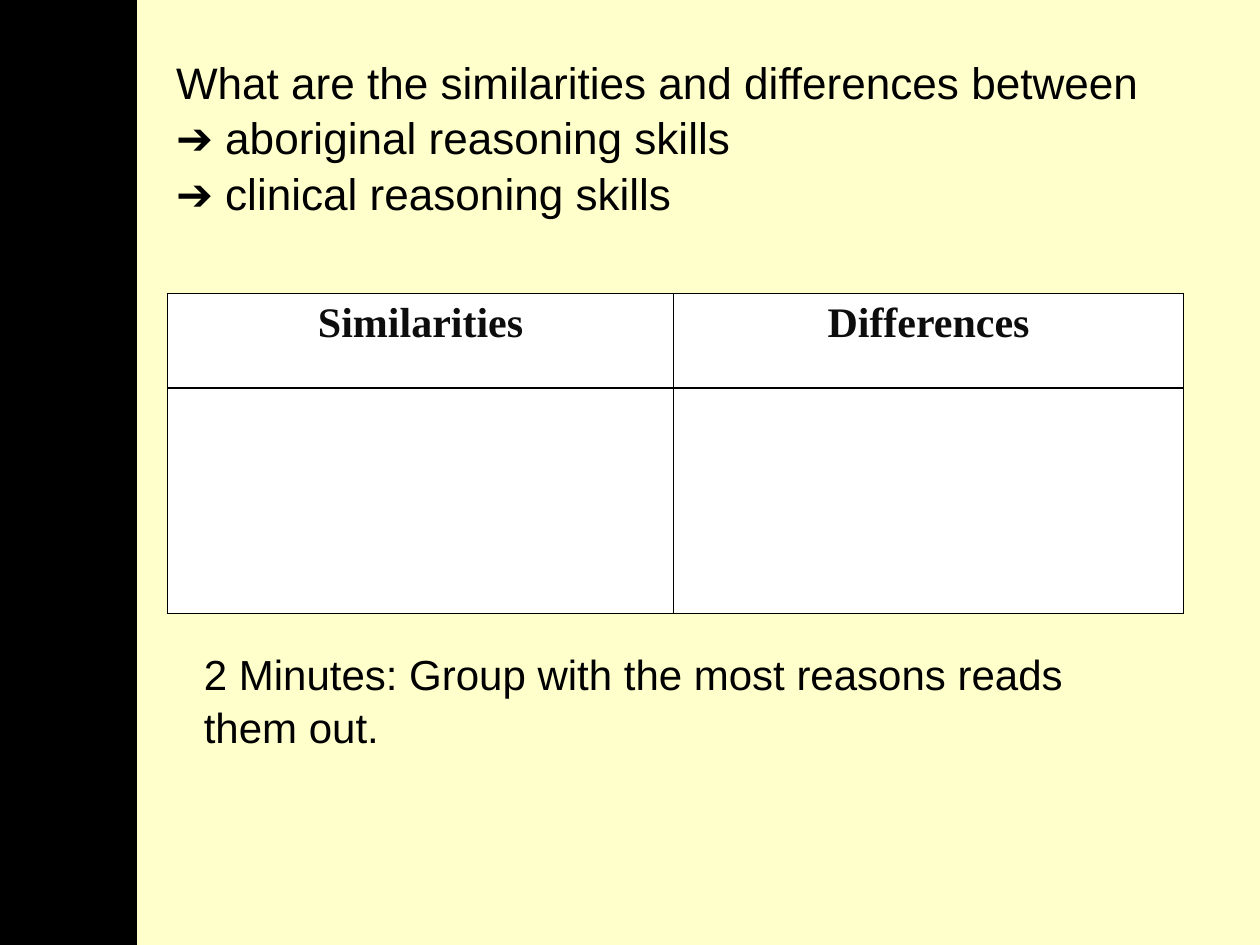
from lxml import etree
from pptx import Presentation
from pptx.dml.color import RGBColor
from pptx.enum.shapes import MSO_SHAPE as Shape
from pptx.enum.text import MSO_ANCHOR as Anchor, PP_ALIGN as Align
from pptx.oxml.ns import qn
from pptx.util import Cm, Pt

COLORS = {"background": "FFFFCC", "black": "000000", "heading": "0D0D0D", "cell": "FFFFFF"}
BODY = {"name": "Arial", "size": Pt(24)}
TITLE = {"name": "Arial", "size": Pt(25.2)}
HEADING = {"name": "Times New Roman", "size": Pt(24), "bold": True}


def rgb(key):
    return RGBColor.from_string(COLORS[key])


def paint(fill, key):
    fill.solid()
    fill.fore_color.rgb = rgb(key)


def style(font, values, color):
    for name, value in values.items():
        setattr(font, name, value)
    font.color.rgb = rgb(color)


def add_sidebar(s):
    bar = s.shapes.add_shape(Shape.RECTANGLE, 0, 0, Cm(2.72), Cm(19.05))
    bar.shadow.inherit = False
    paint(bar.fill, "black")
    bar.line.color.rgb = rgb("black")
    bar.line.width = Pt(2)


def add_text(s, box, lines, values, anchor=Anchor.TOP):
    """Add one paragraph whose lines are parted by line breaks."""
    tf = s.shapes.add_textbox(*map(Cm, box)).text_frame
    tf.word_wrap = True
    tf.vertical_anchor = anchor
    p = tf.paragraphs[0]
    p.line_spacing = 1.05
    for i, line in enumerate(lines):
        if i:
            p.add_line_break()
        r = p.add_run()
        r.text = line
        style(r.font, values, "black")
    style(p.font, values, "black")


def add_borders(cell):
    props = cell._tc.get_or_add_tcPr()
    for i, side in enumerate(("lnL", "lnR", "lnT", "lnB")):
        line = etree.Element(qn(f"a:{side}"), w=str(Pt(1)))
        fill = etree.SubElement(line, qn("a:solidFill"))
        etree.SubElement(fill, qn("a:srgbClr"), val=COLORS["black"])
        props.insert(i, line)


def add_comparison(s, headings, widths, heights):
    frame = s.shapes.add_table(len(heights), len(widths), Cm(3.38), Cm(5.92),
                               Cm(sum(widths)), Cm(sum(heights)))
    table = frame.table
    for column, width in zip(table.columns, widths):
        column.width = Cm(width)
    for row, height in zip(table.rows, heights):
        row.height = Cm(height)
    for cell in table.iter_cells():
        paint(cell.fill, "cell")
        add_borders(cell)
    for cell, heading in zip(table.rows[0].cells, headings):
        p = cell.text_frame.paragraphs[0]
        p.alignment = Align.CENTER
        r = p.add_run()
        r.text = heading
        style(r.font, HEADING, "heading")


def main():
    prs = Presentation()
    prs.slide_width, prs.slide_height = Cm(25.4), Cm(19.05)
    s = prs.slides.add_slide(prs.slide_layouts[6])
    paint(s.background.fill, "background")
    add_sidebar(s)
    add_comparison(s, ["Similarities", "Differences"], [10.2, 10.28], [1.9, 4.55])
    add_text(s, (3.86, 12.9, 19.63, 2.31),
             ["2 Minutes: Group with the most reasons reads them out."], BODY)
    add_text(s, (3.3, 1.37, 22.1, 2.74),
             ["What are the similarities and differences between",
              "➔ aboriginal reasoning skills",
              "➔ clinical reasoning skills"], TITLE, Anchor.MIDDLE)
    prs.save("out.pptx")


if __name__ == "__main__":
    main()
